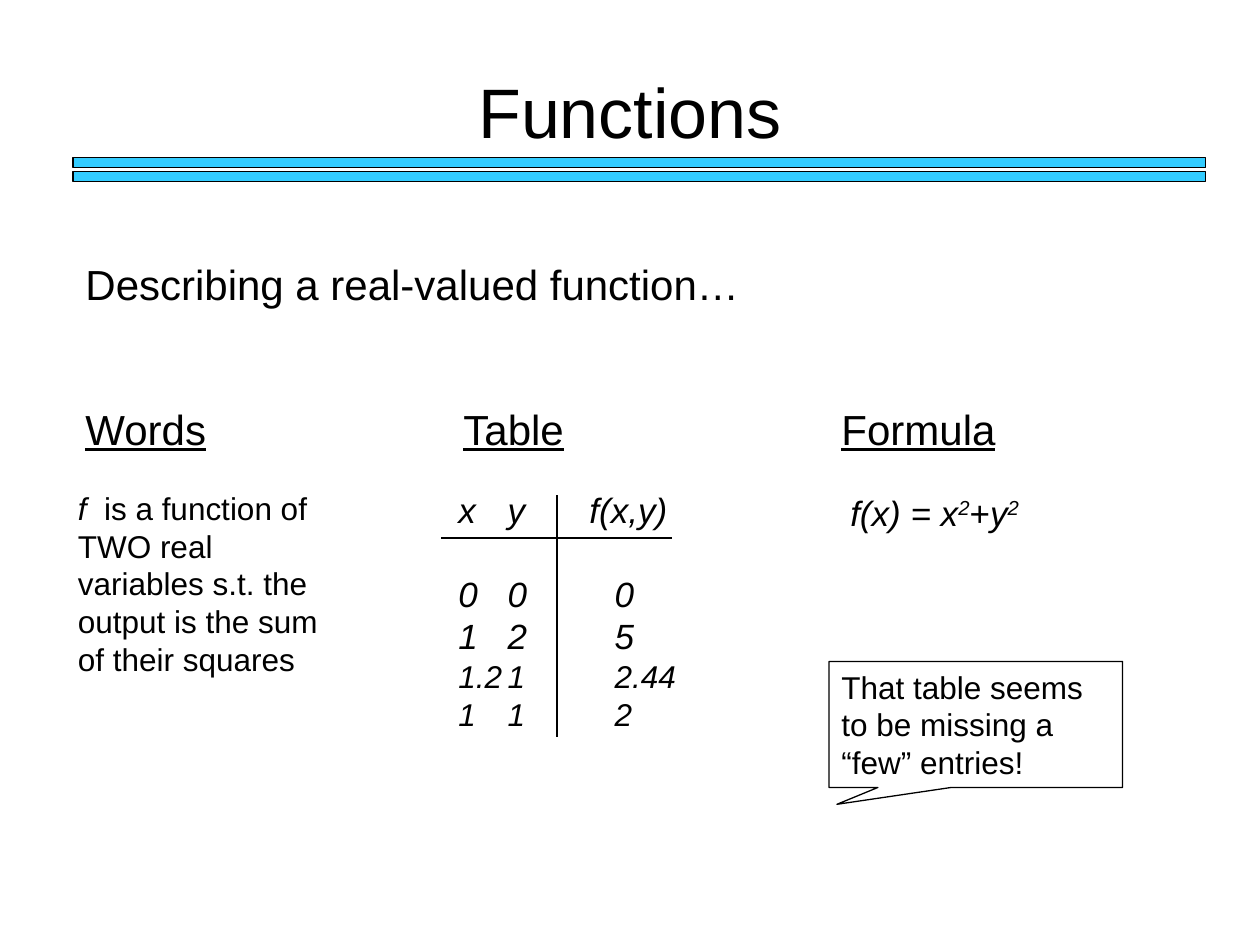
from pptx import Presentation
from pptx.dml.color import RGBColor
from pptx.enum.shapes import MSO_CONNECTOR as LINE, MSO_SHAPE as SHAPE
from pptx.enum.text import MSO_ANCHOR as ANCHOR, PP_ALIGN as ALIGN
from pptx.oxml.ns import qn
from pptx.util import Inches, Pt
from lxml.etree import SubElement

BLACK = RGBColor(0x00, 0x00, 0x00)
WHITE = RGBColor(0xFF, 0xFF, 0xFF)
CYAN = RGBColor(0x33, 0xCC, 0xFF)

prs = Presentation()
prs.slide_width, prs.slide_height = Inches(10), Inches(7.5)
slide = prs.slides.add_slide(prs.slide_layouts[6])
shapes = slide.shapes


def write(shape, runs, size, first=True, align=ALIGN.LEFT, before=0, tabs=()):
    """Fill one paragraph; each run is (text, marks), with marks from i, u and ^."""
    frame = shape.text_frame
    frame.word_wrap = True
    para = frame.paragraphs[0] if first else frame.add_paragraph()
    para.alignment = align
    para.space_before = Pt(before)
    if tabs:
        stops = SubElement(para._p.get_or_add_pPr(), qn("a:tabLst"))
        for pos in tabs:
            SubElement(stops, qn("a:tab"), pos=str(Inches(pos)), algn="l")
    for text, marks in runs:
        run = para.add_run()
        run.text = text
        font = run.font
        font.name, font.size = "Arial", Pt(size)
        font.color.rgb = BLACK
        font.italic = "i" in marks
        font.underline = "u" in marks
        if "^" in marks:
            font._element.set("baseline", "30000")


def draw(kind, box, fill):
    shape = shapes.add_shape(kind, *map(Inches, box))
    shape.shadow.inherit = False
    shape.fill.solid()
    shape.fill.fore_color.rgb = fill
    shape.line.color.rgb = BLACK
    shape.line.width = Pt(0.75)
    return shape


# Title and double bar
title = shapes.add_textbox(*map(Inches, (0.75, 0.25, 8.5, 1.25)))
title.text_frame.vertical_anchor = ANCHOR.MIDDLE
write(title, [("Functions", "")], 40, align=ALIGN.CENTER)
for top in (1.25, 1.36):
    draw(SHAPE.RECTANGLE, (0.58, top, 8.99, 0.08), CYAN)

# Lead line and column heads
lead = shapes.add_textbox(*map(Inches, (0.58, 2, 8.83, 1.7)))
write(lead, [("Describing a real-valued function…", "")], 24)
heads = [("Words", "u"), ("\t", ""), ("Table", "u"), ("\t", ""), ("Formula", "u")]
write(lead, heads, 24, first=False, before=54, tabs=(3, 6))

# Words
words = shapes.add_textbox(*map(Inches, (0.52, 3.83, 2.14, 1.6)))
write(words, [("f", "i"), ("  is a function of TWO real variables s.t. "
                           "the output is the sum of their squares", "")], 18)

# Formula
formula = shapes.add_textbox(*map(Inches, (6.65, 3.85, 1.7, 0.43)))
write(formula, [("f(x) = x", "i"), ("2", "i^"), ("+", ""),
                ("y", "i"), ("2", "i^")], 20)

# Remark
remark = draw(SHAPE.RECTANGULAR_CALLOUT, (6.58, 5.25, 2.33, 1), WHITE)
remark.adjustments[0], remark.adjustments[1] = -0.473, 0.634
remark.text_frame.vertical_anchor = ANCHOR.TOP
write(remark, [("That table seems to be missing a “few” entries!", "")], 18)

# Table of values: size, space before, stop of the last column, cells
rows = [
    (20, 0, 1.04, ("x", "y", "f(x,y)")),
    (20, 24, 1.24, ("0", "0", "0")),
    (20, 0, 1.24, ("1", "2", "5")),
    (18, 0, 1.24, ("1.2", "1", "2.44")),
    (18, 0, 1.24, ("1", "1", "2")),
]
table = shapes.add_textbox(*map(Inches, (3.54, 3.83, 1.94, 2.03)))
for num, (size, gap, stop, cells) in enumerate(rows):
    write(table, [("\t".join(cells), "i")], size, first=num == 0,
          before=gap, tabs=(0.39, stop))

for ends in ((3.5, 4.27, 5.33, 4.27), (4.42, 3.93, 4.42, 5.85)):
    rule = shapes.add_connector(LINE.STRAIGHT, *map(Inches, ends))
    rule.line.color.rgb = BLACK
    rule.line.width = Pt(0.75)
    SubElement(rule._element.spPr, qn("a:effectLst"))

prs.save("out.pptx")
